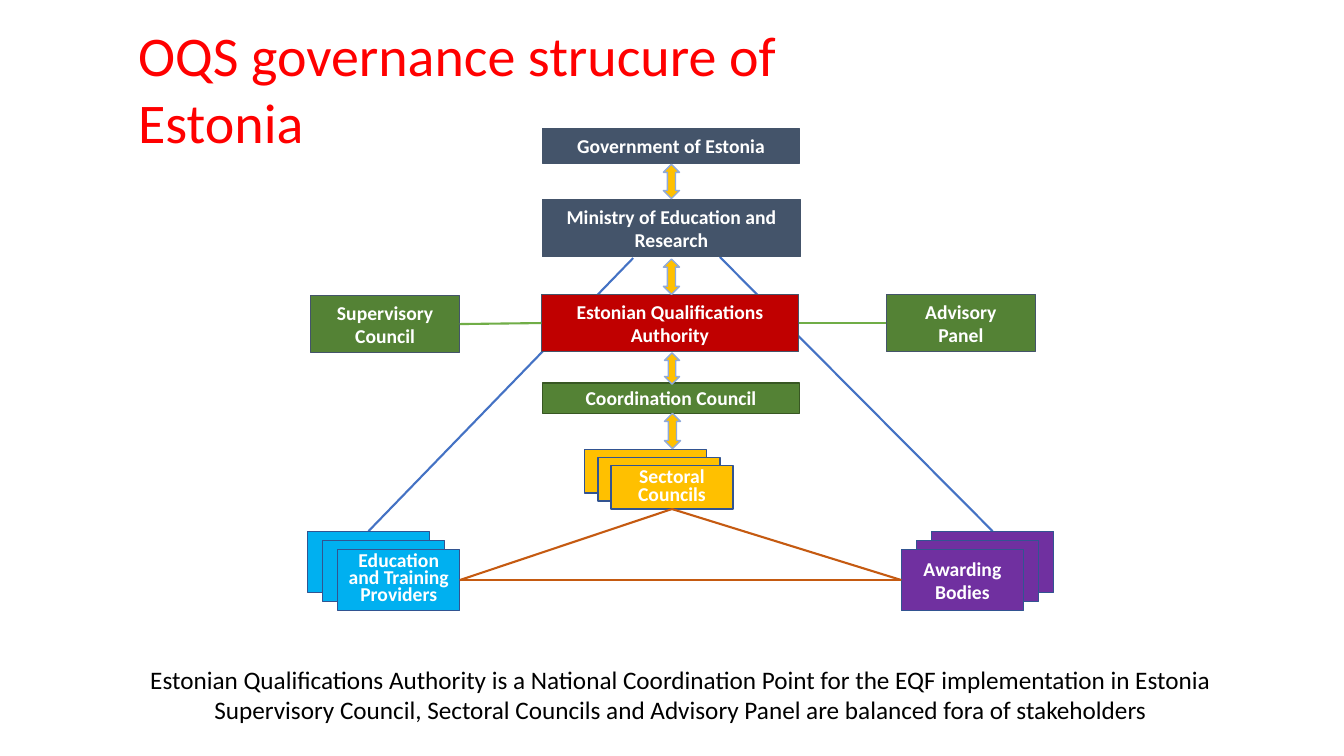
import pptx
import pptx.util
import pptx.dml.color
import pptx.enum.shapes
import pptx.enum.text
from lxml import etree

SCALE = 9144  # EMU in one px, 100 px to the inch
TITLE = "OQS governance strucure of Estonia"
NOTES = [
    "Estonian Qualifications Authority is a National Coordination Point for the EQF implementation in Estonia",
    "Supervisory Council, Sectoral Councils and Advisory Panel are balanced fora of stakeholders",
]
SLATE, GREEN, RED = "44546A", "548235", "C00000"
BOXES = {
    "council": (["Coordination Council"], (538, 380, 255, 30), GREEN, "385723"),
    "ministry": (["Ministry of Education and Research"], (538, 198, 256, 57), SLATE, SLATE),
    "government": (["Government of Estonia"], (538, 128, 255, 34), SLATE, SLATE),
    "supervisory": (["Supervisory Council"], (308, 293, 148, 57), GREEN, SLATE),
    "authority": (["Estonian Qualifications Authority"], (537, 292, 255, 57), RED, SLATE),
    "advisory": (["Advisory", "Panel"], (879, 292, 148, 57), GREEN, SLATE),
}
STACKS = {
    "sectoral": (["Sectoral", "Councils"], (606, 462, 121, 43), (-13, -8), "FFC000", 13),
    "education": (["Education and Training Providers"], (335, 545, 121, 61), (-15, -9), "00B0F0", 12),
    "awarding": (["Awarding Bodies"], (894, 545, 121, 61), (15, -9), "7030A0", None),
}
ARROWS = [(658, 163, 16, 34), (658, 257, 16, 35), (659, 350, 15, 31), (659, 410, 16, 35)]
SIDES = [("awarding", (714, 255)), ("education", (628, 256))]
JOINS = [
    ("supervisory", 3, "authority", 1, "70AD47"),
    ("authority", 3, "advisory", 1, "70AD47"),
    ("education", 3, "sectoral", 2, "C55A11"),
    ("awarding", 1, "sectoral", 2, "C55A11"),
    ("education", 3, "awarding", 1, "C55A11"),
]
KIND = pptx.enum.shapes.MSO_SHAPE
ANCHOR = pptx.enum.text.MSO_ANCHOR
ALIGN = pptx.enum.text.PP_ALIGN


def px(*sizes):
    return [round(size * SCALE) for size in sizes]


def color(code):
    return pptx.dml.color.RGBColor.from_string(code)


def write(shape, lines, size=14, ink="FFFFFF", bold=False, align=ALIGN.CENTER,
          anchor=ANCHOR.TOP, wrap=True, pitch=None):
    frame = shape.text_frame
    frame.auto_size = pptx.enum.text.MSO_AUTO_SIZE.NONE
    frame.word_wrap = wrap
    frame.vertical_anchor = anchor
    side, top = px(10, 5)
    frame.margin_left = frame.margin_right = side
    frame.margin_top = frame.margin_bottom = top
    for i, line in enumerate(lines):
        para = frame.add_paragraph() if i else frame.paragraphs[0]
        para.alignment = align
        para.line_spacing = pptx.util.Pt(pitch) if pitch else 1.0
        para.space_before = pptx.util.Pt(0)
        run = para.add_run()
        run.text = line
        run.font.name = "Calibri"
        run.font.size = pptx.util.Pt(size)
        run.font.bold = bold
        run.font.color.rgb = color(ink)


def draw(slide, kind, area, fill, edge, width):
    shape = slide.shapes.add_shape(kind, *px(*area))
    shape.shadow.inherit = False
    shape.fill.solid()
    shape.fill.fore_color.rgb = color(fill)
    shape.line.color.rgb = color(edge)
    shape.line.width = pptx.util.Pt(width)
    return shape


def link(slide, ink, start=(0, 0), end=(0, 0)):
    wire = slide.shapes.add_connector(
        pptx.enum.shapes.MSO_CONNECTOR.STRAIGHT, *px(*start, *end))
    wire.line.color.rgb = color(ink)
    wire.line.width = pptx.util.Pt(1.5)
    props = wire.line._get_or_add_ln().getparent()
    etree.SubElement(props, pptx.oxml.ns.qn("a:effectLst"))
    return wire


def main():
    """Build the governance chart and save it."""
    deck = pptx.Presentation()
    deck.slide_width, deck.slide_height = px(1333, 750)
    slide = deck.slides.add_slide(deck.slide_layouts[5])
    title = slide.shapes.title
    title.left, title.top, title.width, title.height = px(127, 15, 829, 77)
    write(title, [TITLE], size=40, ink="FF0000", align=ALIGN.LEFT, wrap=False)

    wires = [(link(slide, "4472C4", end=end), name) for name, end in SIDES]

    nodes = {}
    for name, (lines, area, fill, edge) in BOXES.items():
        nodes[name] = draw(slide, KIND.RECTANGLE, area, fill, edge, 0.75)
        write(nodes[name], lines, bold=True, anchor=ANCHOR.MIDDLE)

    backs = {}
    for name, (lines, (x, y, w, h), (dx, dy), fill, pitch) in STACKS.items():
        cards = [draw(slide, KIND.RECTANGLE, (x + i * dx, y + i * dy, w, h), fill, "325491", 1)
                 for i in (2, 1, 0)]
        backs[name], nodes[name] = cards[0], cards[-1]
        write(nodes[name], lines, bold=True, anchor=ANCHOR.MIDDLE, pitch=pitch)

    for area in ARROWS:
        draw(slide, KIND.UP_DOWN_ARROW, area, "FFC000", "8FAADC", 1)

    for wire, name in wires:
        wire.begin_connect(backs[name], 0)
    for first, out, last, into, ink in JOINS:
        wire = link(slide, ink)
        wire.begin_connect(nodes[first], out)
        wire.end_connect(nodes[last], into)

    note = slide.shapes.add_textbox(*px(133, 654, 1084, 71))
    write(note, NOTES, size=18, ink="000000", wrap=False)
    deck.save("out.pptx")


if __name__ == "__main__":
    main()
